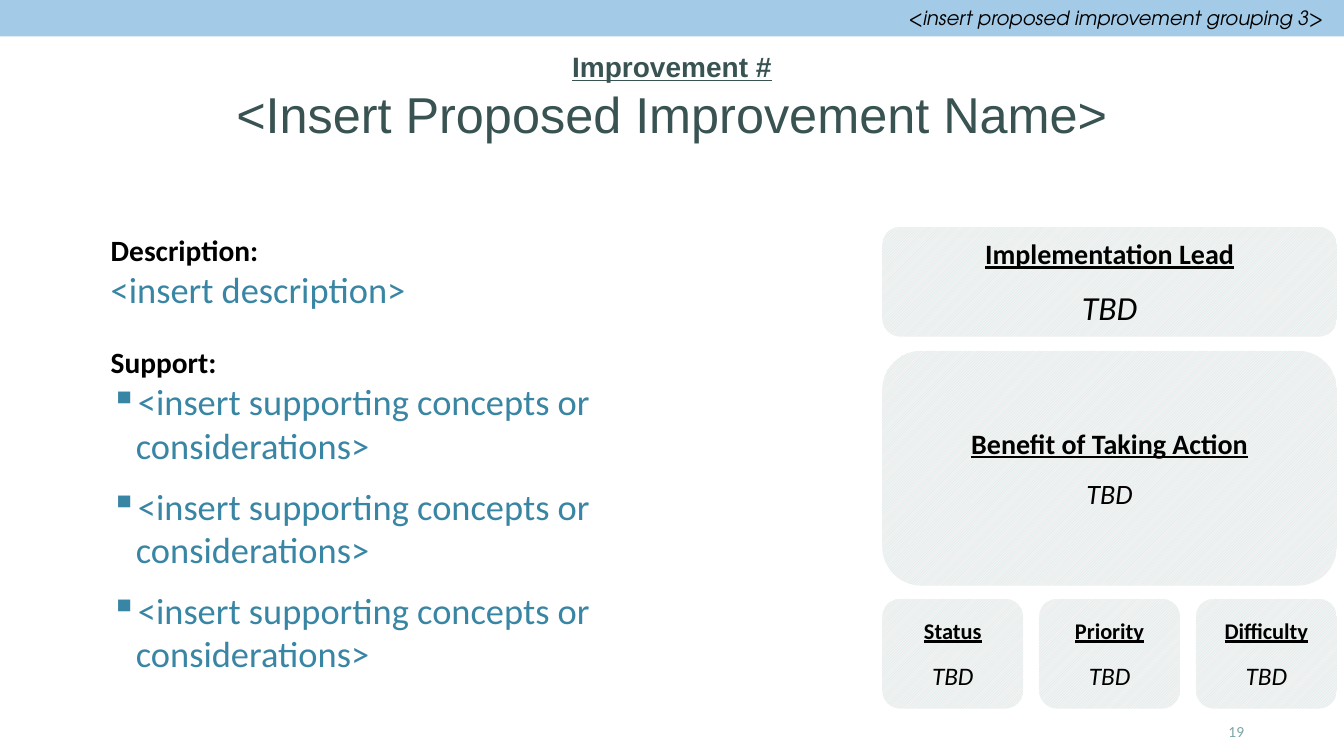
import pptx
import pptx.util
import pptx.dml.color
import pptx.enum.dml
import pptx.enum.shapes
import pptx.enum.text
from lxml import etree
from pptx.util import Inches, Pt

ALIGN = pptx.enum.text.PP_ALIGN
ANCHOR = pptx.enum.text.MSO_ANCHOR
BLACK = "000000"
SLATE = "395352"
BLUE = "3985A4"


def rgb(value):
    """Turn a hex string into a colour."""
    return pptx.dml.color.RGBColor.from_string(value)


def add_run(p, text, size, color=BLACK, font="Calibri", bold=False, italic=False, underline=False):
    """Add a formatted run to a paragraph."""
    r = p.add_run()
    r.text = text
    r.font.size = Pt(size)
    r.font.name = font
    r.font.color.rgb = rgb(color)
    r.font.bold = bold
    r.font.italic = italic
    r.font.underline = underline


def add_paragraph(tf, align=ALIGN.LEFT, before=0, after=0):
    """Return the empty first paragraph or a new one, with its spacing set."""
    p = tf.paragraphs[0]
    if p.runs:
        p = tf.add_paragraph()
    p.alignment = align
    p.space_before = Pt(before)
    p.space_after = Pt(after)
    return p


def set_bullet(p, char, indent):
    """Give a paragraph a bullet with a hanging indent."""
    pPr = p._p.get_or_add_pPr()
    pPr.set("marL", str(Inches(indent)))
    pPr.set("indent", str(-Inches(indent)))
    bullet = etree.SubElement(pPr, pptx.oxml.ns.qn("a:buChar"))
    bullet.set("char", char)


def set_frame(sp, anchor, margins):
    """Set wrapping, anchor and margins (left, top, right, bottom)."""
    tf = sp.text_frame
    tf.word_wrap = True
    tf.vertical_anchor = anchor
    tf.margin_left, tf.margin_top, tf.margin_right, tf.margin_bottom = map(Inches, margins)
    return tf


def add_text_box(s, left, top, width, height, anchor=ANCHOR.TOP, margins=(0, 0, 0, 0)):
    """Add a text box and return its text frame."""
    sp = s.shapes.add_textbox(*map(Inches, (left, top, width, height)))
    return set_frame(sp, anchor, margins)


def add_box(s, left, top, width, height):
    """Add a rounded rectangle without line or shadow."""
    shape = pptx.enum.shapes.MSO_SHAPE.ROUNDED_RECTANGLE
    sp = s.shapes.add_shape(shape, *map(Inches, (left, top, width, height)))
    sp.shadow.inherit = False
    sp.line.fill.background()
    return sp


def add_card(s, left, top, width, height, heading, heading_size, value_size):
    """Add a hatched card with a heading and a value to be decided."""
    sp = add_box(s, left, top, width, height)
    sp.fill.patterned()
    sp.fill.pattern = pptx.enum.dml.MSO_PATTERN.DARK_UPWARD_DIAGONAL
    sp.fill.fore_color.rgb = rgb("D3EAEB")
    sp.fill.back_color.rgb = rgb("F2F2F2")
    tf = set_frame(sp, ANCHOR.MIDDLE, (0.1, 0.25, 0.1, 0.25))
    add_run(add_paragraph(tf, ALIGN.CENTER), heading, heading_size, bold=True, underline=True)
    add_run(add_paragraph(tf, ALIGN.CENTER, before=12), "TBD", value_size, italic=True)


def add_title(s):
    """Add the improvement number and name."""
    tf = add_text_box(s, 0, 0.49, 13.33, 1)
    p = add_paragraph(tf, ALIGN.CENTER)
    add_run(p, "Improvement #", 20, SLATE, "Arial", bold=True, underline=True)
    p.add_line_break()
    add_run(p, "<Insert Proposed Improvement Name>", 36, SLATE, "Arial")


def add_body(s):
    """Add the description and the bulleted support."""
    tf = add_text_box(s, 1, 2.25, 7.2, 5.02, margins=(0.1, 0.05, 0.1, 0.05))
    add_run(add_paragraph(tf, before=12), "Description:", 21, bold=True)
    add_run(add_paragraph(tf, after=12), "<insert description>", 26, BLUE)
    add_run(add_paragraph(tf, before=12), "Support:", 21, bold=True)
    for _ in range(3):
        p = add_paragraph(tf, after=12)
        set_bullet(p, "▪", 0.25)
        add_run(p, "<insert supporting concepts or considerations>", 26, BLUE)


def add_banner(s, text):
    """Add the band across the top of the slide."""
    sp = add_box(s, 0, -0.01, 13.33, 0.37)
    sp.adjustments[0] = 0
    sp.fill.solid()
    sp.fill.fore_color.rgb = rgb("A3CBE8")
    tf = set_frame(sp, ANCHOR.MIDDLE, (0, 0, 0.2, 0))
    add_run(add_paragraph(tf, ALIGN.RIGHT), text, 14, font="TeX Gyre Adventor", italic=True)


def main():
    """Build and save the slide."""
    prs = pptx.Presentation()
    prs.slide_width = Inches(13.33)
    prs.slide_height = Inches(7.5)
    s = prs.slides.add_slide(prs.slide_layouts[6])

    tf = add_text_box(s, 11.91, 7.16, 0.43, 0.19, ANCHOR.BOTTOM)
    add_run(add_paragraph(tf, ALIGN.RIGHT), "19", 11, "7BA5A3")
    add_title(s)
    add_body(s)

    left, width, small = 8.75, 4.51, 1.4
    add_card(s, left, 2.25, width, 1.09, "Implementation Lead", 20, 24)
    add_card(s, left, 3.48, width, 2.33, "Benefit of Taking Action", 20, 20)
    step = (width - small) / 2
    for i, heading in enumerate(("Status", "Priority", "Difficulty")):
        add_card(s, left + i * step, 5.94, small, 1.09, heading, 16, 18)

    add_banner(s, "<insert proposed improvement grouping 3>")
    prs.save("out.pptx")


if __name__ == "__main__":
    main()
